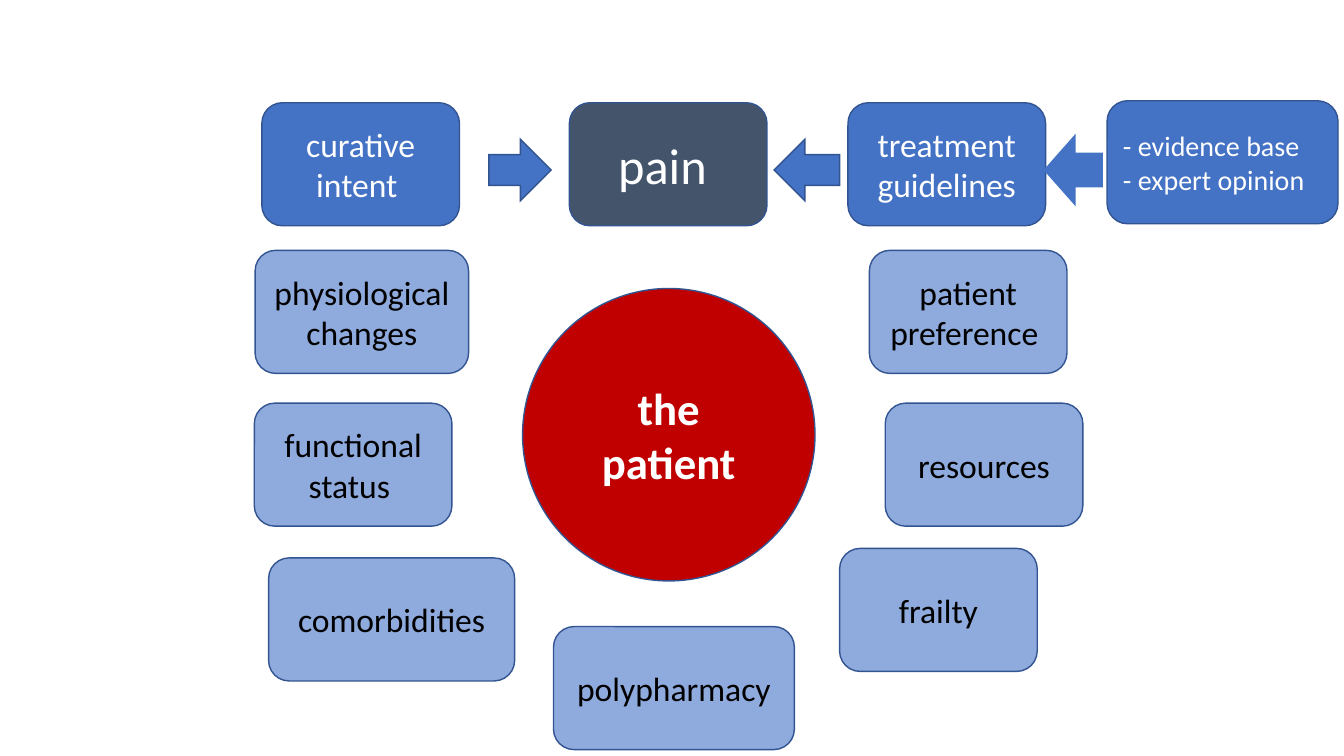
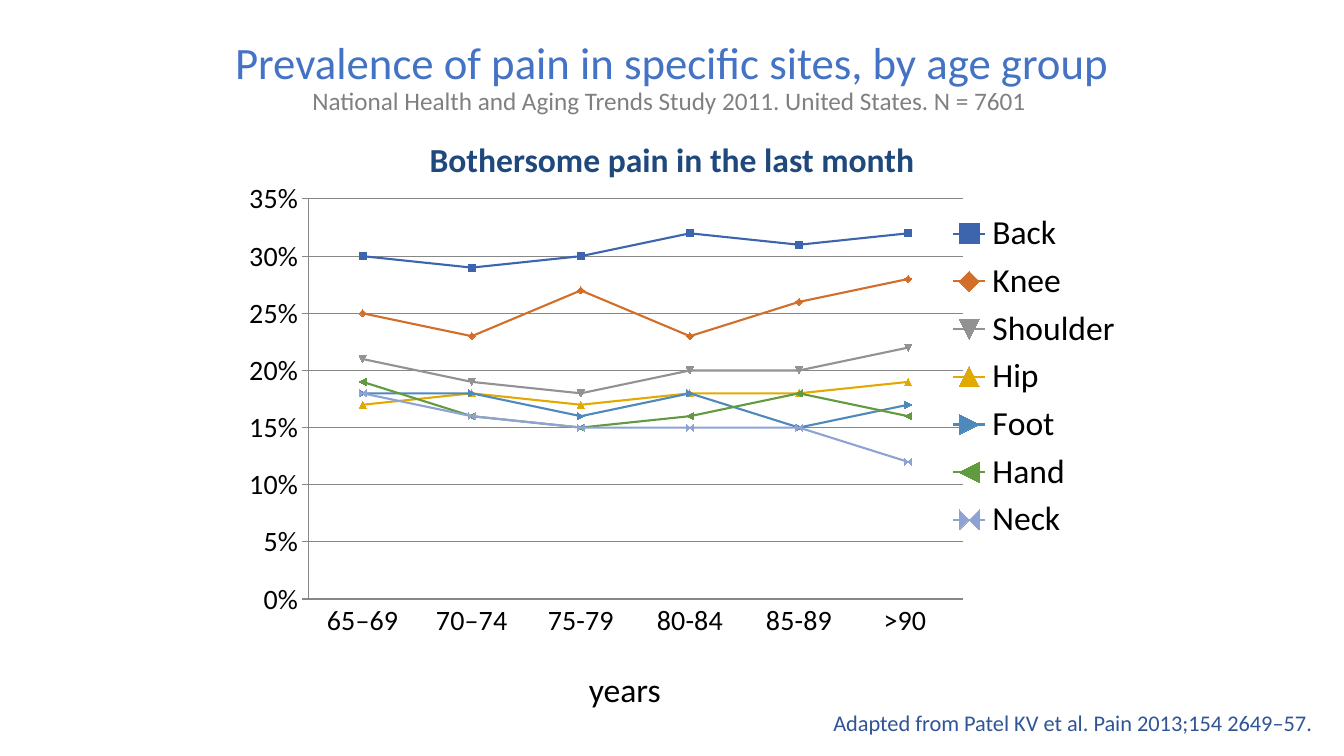
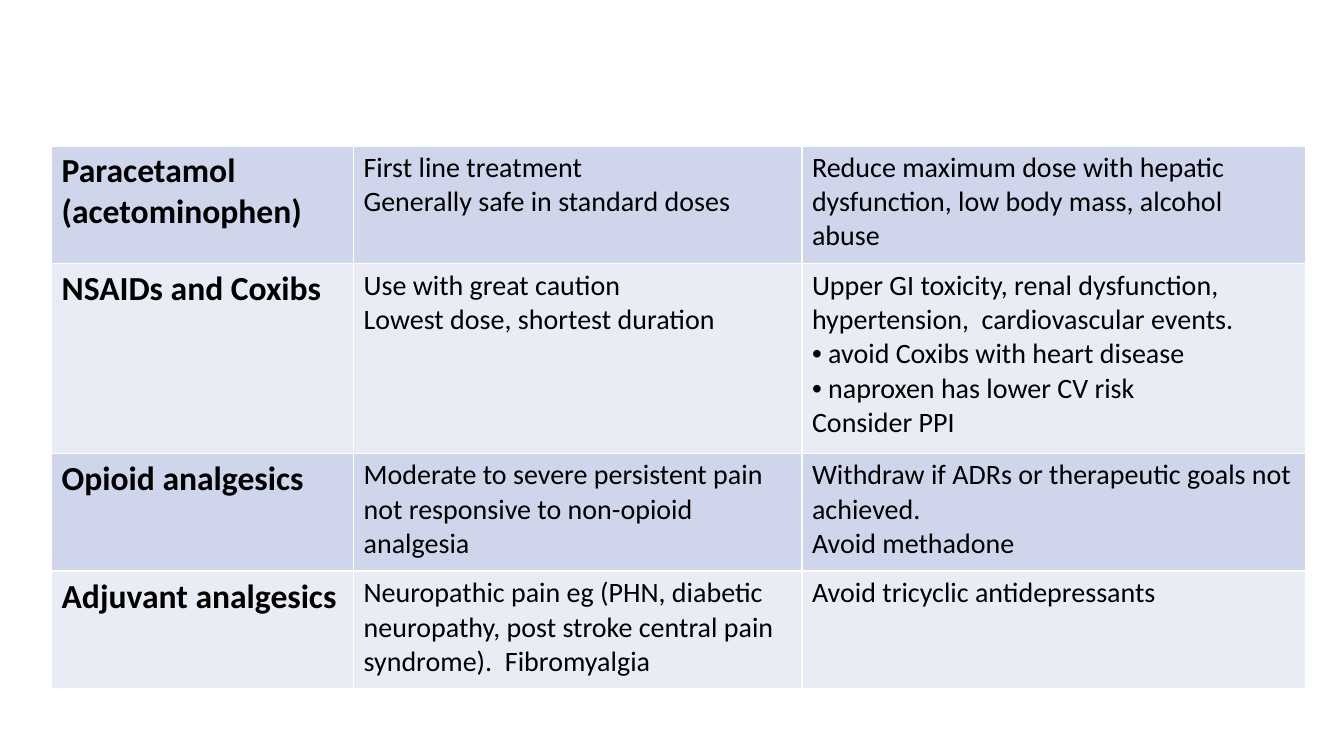
from dataclasses import dataclass

from lxml.etree import SubElement
from pptx import Presentation
from pptx.chart.data import CategoryChartData
from pptx.dml.color import RGBColor
from pptx.enum.chart import XL_CHART_TYPE as ChartType
from pptx.enum.chart import XL_LEGEND_POSITION as LegendPos
from pptx.enum.chart import XL_TICK_MARK as Tick
from pptx.enum.shapes import MSO_SHAPE as Shape
from pptx.enum.text import MSO_ANCHOR as Anchor
from pptx.enum.text import PP_ALIGN as Align
from pptx.oxml.ns import qn
from pptx.util import Cm, Pt


@dataclass(frozen=True)
class Theme:
    font: str = "Calibri"
    black: str = "000000"
    white: str = "FFFFFF"
    blue: str = "4472C4"
    pale_blue: str = "8FAADC"
    outline: str = "325491"
    slate: str = "44546A"
    red: str = "C00000"
    grey: str = "808080"
    navy: str = "1F497D"
    source: str = "2F5597"
    grid: str = "878787"
    bands: tuple = ("CFD5EA", "E9EBF5")
    lines: tuple = ("3C65AE", "D26E2A", "929292", "E2AA00",
                    "4E89BC", "629A3F", "8FA2D4")
    huge: int = 36
    title: int = 32
    label: int = 24
    body: int = 20
    subtitle: int = 18
    note: int = 16


T = Theme()
SLIDE_W, SLIDE_H = 33.87, 19.05
NODE_W, NODE_H = 4.98, 3.1


def rgb(value):
    return RGBColor.from_string(value)


def style_font(font, size, color=T.black, bold=False):
    font.name, font.size, font.bold = T.font, Pt(size), bold
    font.color.rgb = rgb(color)


def add_run(p, text, size, color=T.black, bold=False):
    r = p.add_run()
    r.text = text
    style_font(r.font, size, color, bold)


def add_bullet(p):
    pPr = p._p.get_or_add_pPr()
    pPr.set("marL", "0")
    pPr.set("indent", "0")
    SubElement(pPr, qn("a:buFont")).set("typeface", "Arial")
    SubElement(pPr, qn("a:buChar")).set("char", "•")


def write(tf, lines, size, color=T.black, bold=False, align=Align.LEFT):
    """Write one paragraph a line; a line that starts with • is bulleted."""
    for i, line in enumerate(lines):
        p = tf.add_paragraph() if i else tf.paragraphs[0]
        p.alignment = align
        if line.startswith("•"):
            add_bullet(p)
        add_run(p, line.removeprefix("•"), size, color, bold)


def add_label(s, box, text, size, color, bold=False, align=Align.LEFT, wrap=False):
    tf = s.shapes.add_textbox(*map(Cm, box)).text_frame
    tf.word_wrap = wrap
    write(tf, [text], size, color, bold, align)


def add_block(s, kind, box, fill, line=T.outline, line_width=1):
    """Filled shape with sharp line corners; no outline if line is None."""
    sp = s.shapes.add_shape(kind, *map(Cm, box))
    sp.shadow.inherit = False
    sp.fill.solid()
    sp.fill.fore_color.rgb = rgb(fill)
    if line is None:
        sp.line.fill.background()
    else:
        sp.line.color.rgb = rgb(line)
        sp.line.width = Pt(line_width)
        SubElement(sp.line._get_or_add_ln(), qn("a:miter")).set("lim", "800000")
    return sp


def add_node(s, box, lines, fill, size=T.label, color=T.white, bold=False,
             align=Align.CENTER, kind=Shape.ROUNDED_RECTANGLE):
    tf = add_block(s, kind, box, fill).text_frame
    tf.word_wrap = True
    tf.vertical_anchor = Anchor.MIDDLE
    write(tf, lines, size, color, bold, align)


def add_influences(s, left, top):
    """Row of boxes whose arrows lead to pain."""
    add_node(s, (left, top, NODE_W, NODE_H), ["curative intent "], T.blue)
    add_node(s, (left + 7.75, top, NODE_W, NODE_H), ["pain "], T.slate, T.huge)
    add_node(s, (left + 14.77, top, NODE_W, NODE_H), ["treatment guidelines"], T.blue)
    add_node(s, (left + 21.3, top - 0.05, 5.82, NODE_H),
             ["- evidence base", "- expert opinion"], T.blue, T.body, align=Align.LEFT)
    for kind, dx, width, line, line_width in (
            (Shape.RIGHT_ARROW, 5.72, 1.57, T.outline, 1),
            (Shape.LEFT_ARROW, 12.91, 1.65, T.outline, 1),
            (Shape.LEFT_ARROW, 19.77, 1.37, T.blue, 3)):
        add_block(s, kind, (left + dx, top + 0.92, width, 1.55), T.blue, line, line_width)


def add_patient_factors(s, left, top):
    """The patient, ringed by the factors that shape treatment."""
    add_node(s, (left + 6.76, top + 0.96, 7.37, 7.37), ["the patient"], T.red,
             T.title, bold=True, kind=Shape.OVAL)
    for text, dx, dy, width in (
            ("physiological changes", 0.02, 0, 5.38),
            ("functional status ", 0, 3.85, NODE_W),
            ("comorbidities", 0.36, 7.75, 6.2),
            ("polypharmacy", 7.54, 9.48, 6.07),
            ("frailty", 14.75, 7.51, NODE_W),
            ("resources", 15.9, 3.85, NODE_W),
            ("patient preference ", 15.5, 0, NODE_W)):
        add_node(s, (left + dx, top + dy, width, NODE_H), [text], T.pale_blue,
                 color=T.black)


def add_heading(s, box, title, subtitle):
    tf = add_block(s, Shape.RECTANGLE, box, T.white, line=None).text_frame
    tf.word_wrap = True
    tf.vertical_anchor = Anchor.MIDDLE
    p = tf.paragraphs[0]
    p.alignment, p.line_spacing = Align.CENTER, 0.9
    add_run(p, title, T.title, T.blue)
    p.add_line_break()
    add_run(p, subtitle, T.subtitle, T.grey)


def set_layout(parent, index, **values):
    """Place a chart part by fractions of the chart's size."""
    for old in parent.findall(qn("c:layout")):
        parent.remove(old)
    layout = SubElement(parent, qn("c:layout"))
    parent.insert(index, layout)
    manual = SubElement(layout, qn("c:manualLayout"))
    for tag, value in values.items():
        SubElement(manual, qn(f"c:{tag}")).set("val", str(value))


def add_pain_chart(s, box):
    data = CategoryChartData(number_format="0%")
    data.categories = ["65–69", "70–74", "75-79", "80-84", "85-89", ">90 "]
    for name, values in (
            ("Back", (0.30, 0.29, 0.30, 0.32, 0.31, 0.32)),
            ("Knee ", (0.25, 0.23, 0.27, 0.23, 0.26, 0.28)),
            ("Shoulder", (0.21, 0.19, 0.18, 0.20, 0.20, 0.22)),
            ("Hip", (0.17, 0.18, 0.17, 0.18, 0.18, 0.19)),
            ("Foot", (0.18, 0.18, 0.16, 0.18, 0.15, 0.17)),
            ("Hand", (0.19, 0.16, 0.15, 0.16, 0.18, 0.16)),
            ("Neck", (0.18, 0.16, 0.15, 0.15, 0.15, 0.12))):
        data.add_series(name, values)
    chart = s.shapes.add_chart(ChartType.LINE_MARKERS, *map(Cm, box), data).chart
    chart.has_title = False
    style_font(chart.font, T.subtitle)
    chart.plots[0].vary_by_categories = False
    for series, color in zip(chart.plots[0].series, T.lines):
        series.smooth = False
        series.format.line.width = Pt(1.5)
        series.marker.size = 5
        fill = series.marker.format.fill
        fill.solid()
        for paint in (series.format.line.color, series.marker.format.line.color,
                      fill.fore_color):
            paint.rgb = rgb(color)

    ages, shares = chart.category_axis, chart.value_axis
    ages.major_tick_mark = Tick.NONE
    shares.major_tick_mark = Tick.OUTSIDE
    shares.minimum_scale, shares.maximum_scale, shares.major_unit = 0, 0.35, 0.05
    shares.tick_labels.number_format = "0%"
    shares.tick_labels.number_format_is_linked = False
    shares.has_major_gridlines = True
    for axis in (ages, shares):
        style_font(axis.tick_labels.font, T.body)
    for part in (ages, shares, shares.major_gridlines):
        part.format.line.color.rgb = rgb(T.grid)

    chart.has_legend = True
    chart.legend.position = LegendPos.RIGHT
    chart.legend.include_in_layout = False
    style_font(chart.legend.font, T.label)
    set_layout(chart.legend._element, 1, xMode="edge", yMode="edge", x=0.79, y=0.06)
    plot_area = chart._chartSpace.xpath(".//c:plotArea")[0]
    set_layout(plot_area, 0, layoutTarget="inner", xMode="edge", yMode="edge",
               x=0.11, y=0.045, w=0.702, h=0.802)


def set_borders(cell, bottom):
    tcPr = cell._tc.get_or_add_tcPr()
    for i, (side, width) in enumerate((("L", 1), ("R", 1), ("T", 1), ("B", bottom))):
        ln = SubElement(tcPr, qn(f"a:ln{side}"), w=str(Pt(width)))
        tcPr.insert(i, ln)
        fill = SubElement(ln, qn("a:solidFill"))
        SubElement(fill, qn("a:srgbClr")).set("val", T.white)


def add_drug_table(s, left, top):
    header = ([], [], [])
    rows = (
        header,
        (["Paracetamol", "(acetominophen)"],
         ["First line treatment", "Generally safe in standard doses"],
         ["Reduce maximum dose with hepatic dysfunction, low body mass, alcohol abuse"]),
        (["NSAIDs and Coxibs"],
         ["Use with great caution", "Lowest dose, shortest duration"],
         ["Upper GI toxicity, renal dysfunction, hypertension,  cardiovascular events.",
          "• avoid Coxibs with heart disease", "• naproxen has lower CV risk",
          "Consider PPI"]),
        (["Opioid analgesics"],
         ["Moderate to severe persistent pain not responsive to non-opioid analgesia"],
         ["Withdraw if ADRs or therapeutic goals not achieved.", "Avoid methadone"]),
        (["Adjuvant analgesics"],
         ["Neuropathic pain eg (PHN, diabetic neuropathy, post stroke central pain "
          "syndrome).  Fibromyalgia"],
         ["Avoid tricyclic antidepressants"]))
    widths, heights = (7.61, 11.3, 12.7), (1.09, 2.97, 4.78, 2.97, 2.97)
    table = s.shapes.add_table(len(rows), len(widths), Cm(left), Cm(top),
                               Cm(sum(widths)), Cm(sum(heights))).table
    table.first_row = table.horz_banding = False
    for column, width in zip(table.columns, widths):
        column.width = Cm(width)
    for i, (row, height) in enumerate(zip(rows, heights)):
        table.rows[i].height = Cm(height)
        for j, lines in enumerate(row):
            cell = table.cell(i, j)
            if i:
                cell.fill.solid()
                cell.fill.fore_color.rgb = rgb(T.bands[(i - 1) % 2])
            else:
                cell.fill.background()
            set_borders(cell, bottom=1 if i else 3)
            write(cell.text_frame, lines, T.body if j else T.label, bold=j == 0)


def build_patient_slide(s):
    add_influences(s, 6.6, 2.59)
    add_patient_factors(s, 6.41, 6.31)


def build_prevalence_slide(s):
    add_heading(s, (0, 0, SLIDE_W, 3.94),
                "Prevalence of pain in specific sites, by age group",
                "National Health and Aging Trends Study 2011. United States. N = 7601 ")
    add_pain_chart(s, (5.18, 4.45, 23.5, 12.57))
    add_label(s, (14.59, 16.73, 2.34, 1.27), "years", T.label, T.black)
    add_label(s, (20.75, 17.75, 13.12, 0.94),
              "Adapted from Patel KV et al. Pain 2013;154 2649–57.", T.note, T.source,
              wrap=True)
    add_label(s, (10.51, 3.38, 12.85, 1.27), "Bothersome pain in the last month",
              T.label, T.navy, bold=True, align=Align.CENTER)


def build_drug_slide(s):
    add_drug_table(s, 1.3, 2.58)


def main():
    prs = Presentation()
    prs.slide_width, prs.slide_height = Cm(SLIDE_W), Cm(SLIDE_H)
    blank = prs.slide_layouts[6]
    for build in (build_patient_slide, build_prevalence_slide, build_drug_slide):
        build(prs.slides.add_slide(blank))
    prs.save("out.pptx")


if __name__ == "__main__":
    main()
